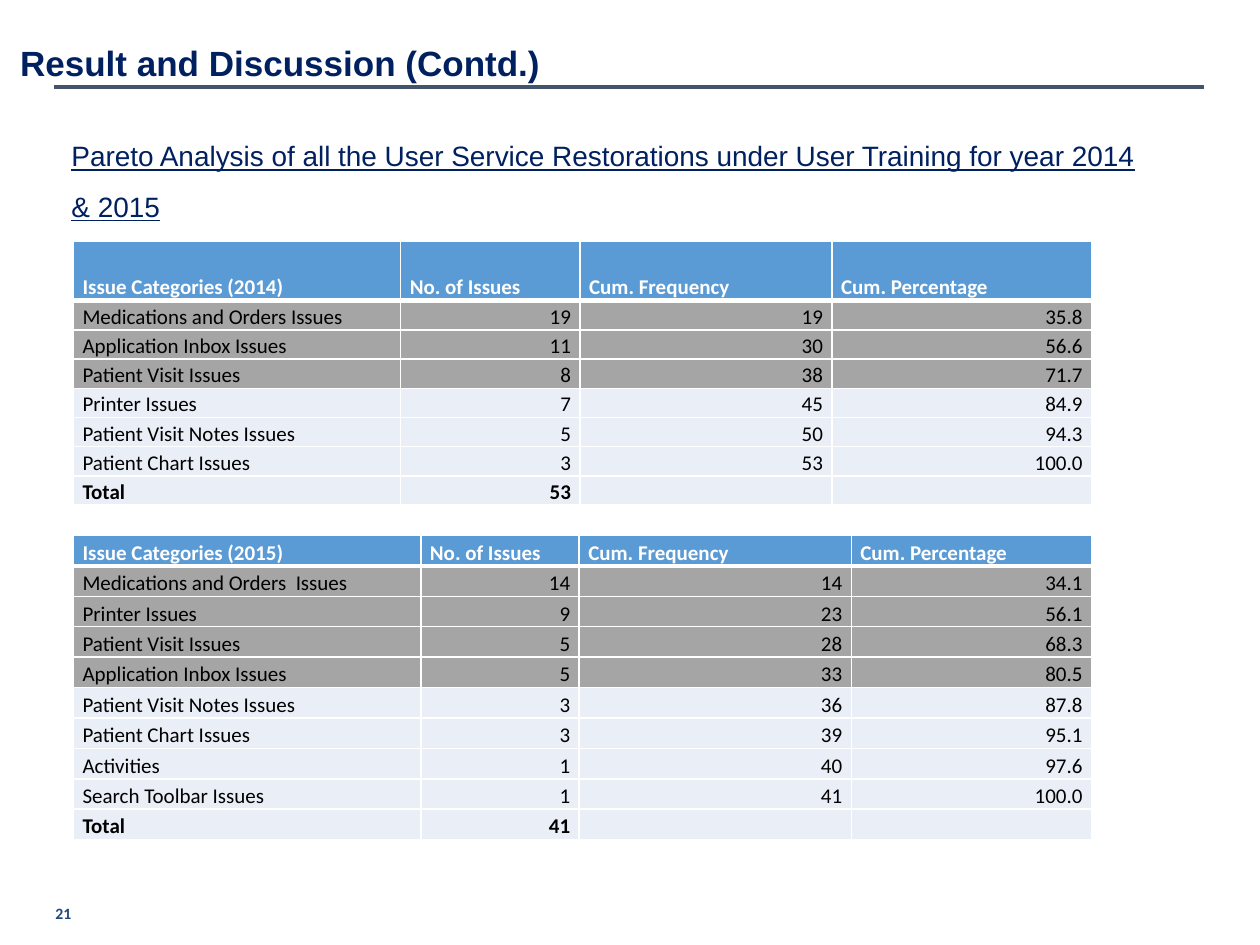
from itertools import accumulate
from lxml import etree
from pptx import Presentation
from pptx.dml.color import RGBColor
from pptx.enum.shapes import MSO_CONNECTOR
from pptx.enum.text import MSO_ANCHOR, PP_ALIGN
from pptx.oxml.ns import qn
from pptx.util import Pt

LINE = MSO_CONNECTOR.STRAIGHT
TOP, MIDDLE, BOTTOM = MSO_ANCHOR.TOP, MSO_ANCHOR.MIDDLE, MSO_ANCHOR.BOTTOM
LEFT, RIGHT = PP_ALIGN.LEFT, PP_ALIGN.RIGHT

COLORS = {
    "navy": "002060", "rule": "44546A", "page": "1F497D", "head": "5B9BD5",
    "vital": "A5A5A5", "plain": "EAEFF7", "white": "FFFFFF", "black": "000000",
}

ISSUES_2014 = [
    ("Medications and Orders Issues", 19),
    ("Application Inbox Issues", 11),
    ("Patient Visit Issues", 8),
    ("Printer Issues", 7),
    ("Patient Visit Notes Issues", 5),
    ("Patient Chart Issues", 3),
]
ISSUES_2015 = [
    ("Medications and Orders  Issues", 14),
    ("Printer Issues", 9),
    ("Patient Visit Issues", 5),
    ("Application Inbox Issues", 5),
    ("Patient Visit Notes Issues", 3),
    ("Patient Chart Issues", 3),
    ("Activities", 1),
    ("Search Toolbar Issues", 1),
]


def color(name):
    return RGBColor.from_string(COLORS[name])


def style(para, size, face, tone, bold=False):
    font = para.font
    font.size, font.name, font.bold = Pt(size), face, bold
    font.color.rgb = color(tone)


def add_text(slide, box, text, inset, anchor, spacing):
    shape = slide.shapes.add_textbox(*map(Pt, box))
    frame = shape.text_frame
    frame.word_wrap = True
    frame.vertical_anchor = anchor
    frame.margin_left, frame.margin_top, frame.margin_right, frame.margin_bottom = map(Pt, inset)
    para = frame.paragraphs[0]
    para.text = text
    para.line_spacing = spacing
    return para


def add_title(slide, left, top, width, height):
    rule = slide.shapes.add_connector(
        LINE, Pt(left + 31), Pt(top + 29.7), Pt(left + 688.3), Pt(top + 29.7))
    rule.line.color.rgb = color("rule")
    rule.line.width = Pt(2.25)
    etree.SubElement(rule._element.spPr, qn("a:effectLst"))
    para = add_text(slide, (left, top, width, height), "Result and Discussion (Contd.)",
                    (11.5, 3.6, 7.2, 3.6), MIDDLE, 0.9)
    style(para, 20, "Arial", "navy", True)


def add_lead(slide, *box):
    text = ("Pareto Analysis of all the User Service Restorations "
            "under User Training for year 2014 & 2015")
    para = add_text(slide, box, text, (7.2, 3.6, 7.2, 3.6), TOP, 1.5)
    style(para, 16, "Arial", "navy")
    para.font.underline = True


def add_page(slide, *box):
    para = add_text(slide, box, "21", (0, 0, 0, 0), TOP, Pt(10.8))
    style(para, 9, "Calibri", "page", True)


def add_edges(cell, upper, lower):
    props = cell._tc.get_or_add_tcPr()
    for side, width in (("L", 1), ("R", 1), ("T", upper), ("B", lower)):
        edge = etree.SubElement(props, qn("a:ln" + side), w=str(Pt(width)))
        fill = etree.SubElement(edge, qn("a:solidFill"))
        etree.SubElement(fill, qn("a:srgbClr"), val=COLORS["white"])


def fill_cell(cell, text, back, tone, bold, align):
    cell.margin_left = cell.margin_right = Pt(5.2)
    cell.margin_top = cell.margin_bottom = 0
    cell.vertical_anchor = BOTTOM
    cell.fill.solid()
    cell.fill.fore_color.rgb = color(back)
    para = cell.text_frame.paragraphs[0]
    para.text = text
    para.alignment = align
    para.line_spacing = 1.15
    style(para, 12, "Calibri", tone, bold)
    if not text:
        etree.SubElement(para._p, qn("a:endParaRPr"), sz="1200")


def pareto_rows(year, issues):
    sums = list(accumulate(count for _, count in issues))
    total = sums[-1]
    head = (f"Issue Categories ({year})", "No. of Issues", "Cum. Frequency", "Cum. Percentage")
    body = [(name, str(count), str(run), f"{100 * run / total:.1f}")
            for (name, count), run in zip(issues, sums)]
    return [head, *body, ("Total", str(total), "", "")]


def add_pareto(slide, left, top, widths, head, pitch, year, issues, vital):
    rows = pareto_rows(year, issues)
    last = len(rows) - 1
    frame = slide.shapes.add_table(
        len(rows), len(widths), Pt(left), Pt(top),
        Pt(sum(widths)), Pt(head + last * pitch))
    table = frame.table
    for col, width in zip(table.columns, widths):
        col.width = Pt(width)
    for r, row in enumerate(rows):
        table.rows[r].height = Pt(pitch if r else head)
        back = "head" if r == 0 else "vital" if r <= vital else "plain"
        tone = "black" if r else "white"
        for c, text in enumerate(row):
            cell = table.cell(r, c)
            add_edges(cell, 3 if r == 1 else 1, 1 if r else 3)
            fill_cell(cell, text, back, tone, r in (0, last), RIGHT if r and c else LEFT)


def main():
    deck = Presentation()
    deck.slide_width, deck.slide_height = Pt(720), Pt(540)
    slide = deck.slides.add_slide(deck.slide_layouts[6])
    add_title(slide, 0, 20, 665.3, 34.6)
    add_page(slide, 31.7, 516.2, 23.8, 11.5)
    add_lead(slide, 33.8, 66.2, 635.8, 154.8)
    add_pareto(slide, 42, 138, (187, 102.5, 144, 148.3), 33.8, 16.7, 2014, ISSUES_2014, 3)
    add_pareto(slide, 42, 306, (198.5, 90.5, 155.5, 137.3), 17.4, 17.4, 2015, ISSUES_2015, 4)
    deck.save("out.pptx")


if __name__ == "__main__":
    main()
